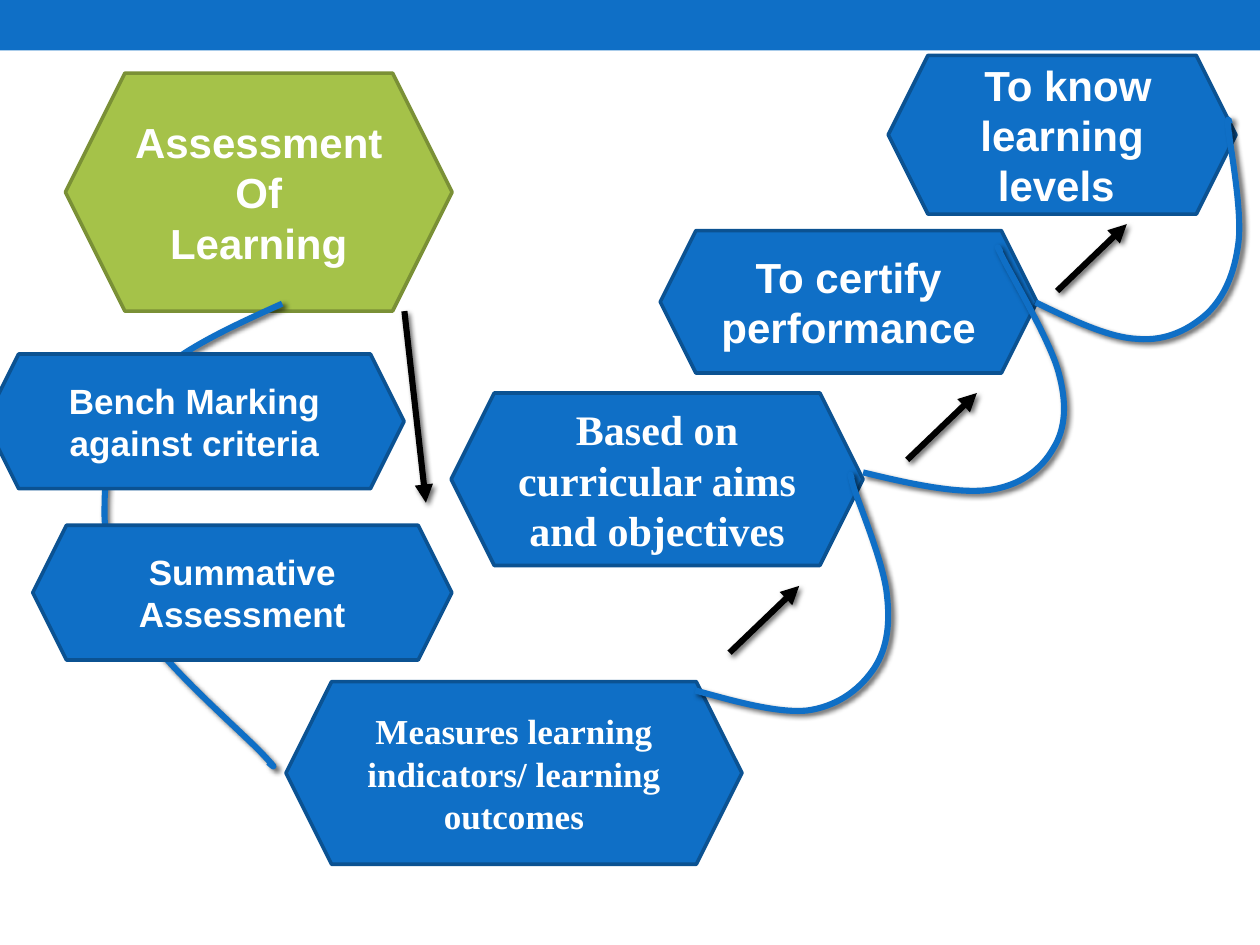
from lxml import etree
from pptx import Presentation
from pptx.dml.color import RGBColor
from pptx.enum.shapes import MSO_CONNECTOR, MSO_SHAPE
from pptx.enum.text import MSO_ANCHOR, PP_ALIGN
from pptx.oxml import parse_xml
from pptx.oxml.ns import qn
from pptx.util import Pt

HEXAGON, RECTANGLE = MSO_SHAPE.HEXAGON, MSO_SHAPE.RECTANGLE
STRAIGHT = MSO_CONNECTOR.STRAIGHT
CENTER, MIDDLE = PP_ALIGN.CENTER, MSO_ANCHOR.MIDDLE

COLORS = {
    "blue": "0F6FC6", "blue_edge": "0B5292",
    "green": "A5C249", "green_edge": "7A9036",
    "white": "FFFFFF", "black": "000000",
}
SANS, SERIF = "Arial", "Times New Roman"
SHADOW = (
    '<a:effectLst xmlns:a="http://schemas.openxmlformats.org/drawingml/2006/main">'
    '<a:outerShdw blurRad="38100" dist="25400" dir="2700000" rotWithShape="0">'
    '<a:srgbClr val="000000"><a:alpha val="60000"/></a:srgbClr>'
    '</a:outerShdw></a:effectLst>'
)


class Board:
    def __init__(self, slide):
        self.shapes = slide.shapes
        self.edge_width = 2.08
        self.line_width = 3.5

    def color(self, name):
        return RGBColor.from_string(COLORS[name])

    def bar(self, x, y, w, h, fill):
        sp = self.shapes.add_shape(RECTANGLE, Pt(x), Pt(y), Pt(w), Pt(h))
        sp.shadow.inherit = False
        sp.fill.solid()
        sp.fill.fore_color.rgb = self.color(fill)
        sp.line.fill.background()

    def hexagon(self, box, text, size, font, fill="blue"):
        sp = self.shapes.add_shape(HEXAGON, *[Pt(v) for v in box])
        sp.shadow.inherit = False
        sp.fill.solid()
        sp.fill.fore_color.rgb = self.color(fill)
        sp.line.color.rgb = self.color(fill + "_edge")
        sp.line.width = Pt(self.edge_width)
        tf = sp.text_frame
        tf.text = text
        tf.word_wrap = True
        tf.vertical_anchor = MIDDLE
        for p in tf.paragraphs:
            p.alignment = CENTER
            for r in p.runs:
                r.font.name = font
                r.font.size = Pt(size)
                r.font.bold = True
                r.font.color.rgb = self.color("white")

    def stroke(self, sp, color):
        sp.line.color.rgb = self.color(color)
        sp.line.width = Pt(self.line_width)
        sp.element.spPr.append(parse_xml(SHADOW))

    def curve(self, points):
        start, *rest = [(Pt(x), Pt(y)) for x, y in points]
        builder = self.shapes.build_freeform(*start)
        builder.add_line_segments(rest, close=False)
        sp = builder.convert_to_shape()
        sp.fill.background()
        self.stroke(sp, "blue")
        outline = sp.element.xpath(".//a:path")[0]
        segments = outline.findall(qn("a:lnTo"))
        for i in range(0, len(segments), 3):
            bezier = etree.SubElement(outline, qn("a:cubicBezTo"))
            for segment in segments[i:i + 3]:
                bezier.append(segment[0])
                outline.remove(segment)

    def arrow(self, x1, y1, x2, y2):
        sp = self.shapes.add_connector(STRAIGHT, Pt(x1), Pt(y1), Pt(x2), Pt(y2))
        self.stroke(sp, "black")
        ln = sp.element.spPr.find(qn("a:ln"))
        etree.SubElement(ln, qn("a:tailEnd"), type="triangle")


STEPS = [
    ((163.4, 389.5, 260.6, 104.4), "Measures learning indicators/ learning outcomes", 20, SERIF),
    ((257.8, 224.6, 235.4, 98.6), "Based on curricular aims and objectives", 24, SERIF),
    ((377.3, 131.8, 215.3, 81.4), "To certify performance", 24, SANS),
    ((507.6, 31.7, 198.7, 90.7), " To know learning levels ", 24, SANS),
]
CRITERIA = [
    ((-8.6, 202.3, 239.5, 77), "Bench Marking against criteria", 20, SANS),
    ((18.7, 300.2, 239.5, 77), "Summative Assessment", 20, SANS),
]
CURVES = [
    [(161.3, 173.5), (131, 187.2), (100.8, 200.9), (83.5, 219.6),
     (66.2, 239), (59.8, 265.7), (59.8, 288.7), (59, 311.8),
     (66.2, 335.5), (81.4, 359.3), (96.5, 382.3), (138.2, 418.3),
     (149.8, 430.6), (162, 443.5), (153.4, 435.6), (153.4, 435.6)],
    [(397.4, 394.6), (420.5, 401), (444.2, 407.5), (460.8, 406.1),
     (478.1, 403.9), (490.3, 394.6), (498.2, 383.8), (506.2, 373),
     (509, 358.6), (506.9, 340.6), (505.4, 322.6), (491, 288.7),
     (487.4, 277.2), (484.6, 266.4), (486.7, 273.6), (486.7, 273.6)],
    [(493.2, 270), (519.8, 276.5), (546.5, 282.2), (564.5, 280.1),
     (583.2, 277.9), (595.4, 267.8), (601.9, 256.3), (609.1, 244.8),
     (609.8, 230.4), (604.8, 212.4), (599.8, 194.4), (578.9, 159.1),
     (573.1, 147.6), (567.4, 136.1), (571.7, 144), (571.7, 144)],
    [(591.8, 172.8), (612.7, 182.9), (633.6, 193), (650.2, 193.7),
     (666.7, 195.1), (680.4, 187.9), (690.5, 178.6), (699.8, 169.2),
     (705.6, 156.2), (707.8, 138.2), (709.9, 121), (703.4, 85.7),
     (702, 74.2), (701.3, 63.4), (702.7, 70.6), (702.7, 70.6)],
]
RISING_STARTS = [(416.9, 373), (518.4, 262.8), (604.1, 166.3)]
RISE_X, RISE_Y = 39.8, -38.2


def main():
    prs = Presentation()
    prs.slide_width, prs.slide_height = Pt(720), Pt(540)
    s = Board(prs.slides.add_slide(prs.slide_layouts[6]))

    s.bar(0, 0, 720, 28.8, "blue")
    s.hexagon((37.4, 41.8, 221, 136), "Assessment Of\nLearning", 24, SANS, "green")
    for step in STEPS:
        s.hexagon(*step)
    for points in CURVES:
        s.curve(points)
    s.arrow(231.1, 177.8, 243.4, 287.3)
    for x, y in RISING_STARTS:
        s.arrow(x, y, x + RISE_X, y + RISE_Y)
    for criterion in CRITERIA:
        s.hexagon(*criterion)

    prs.save("out.pptx")


if __name__ == "__main__":
    main()
